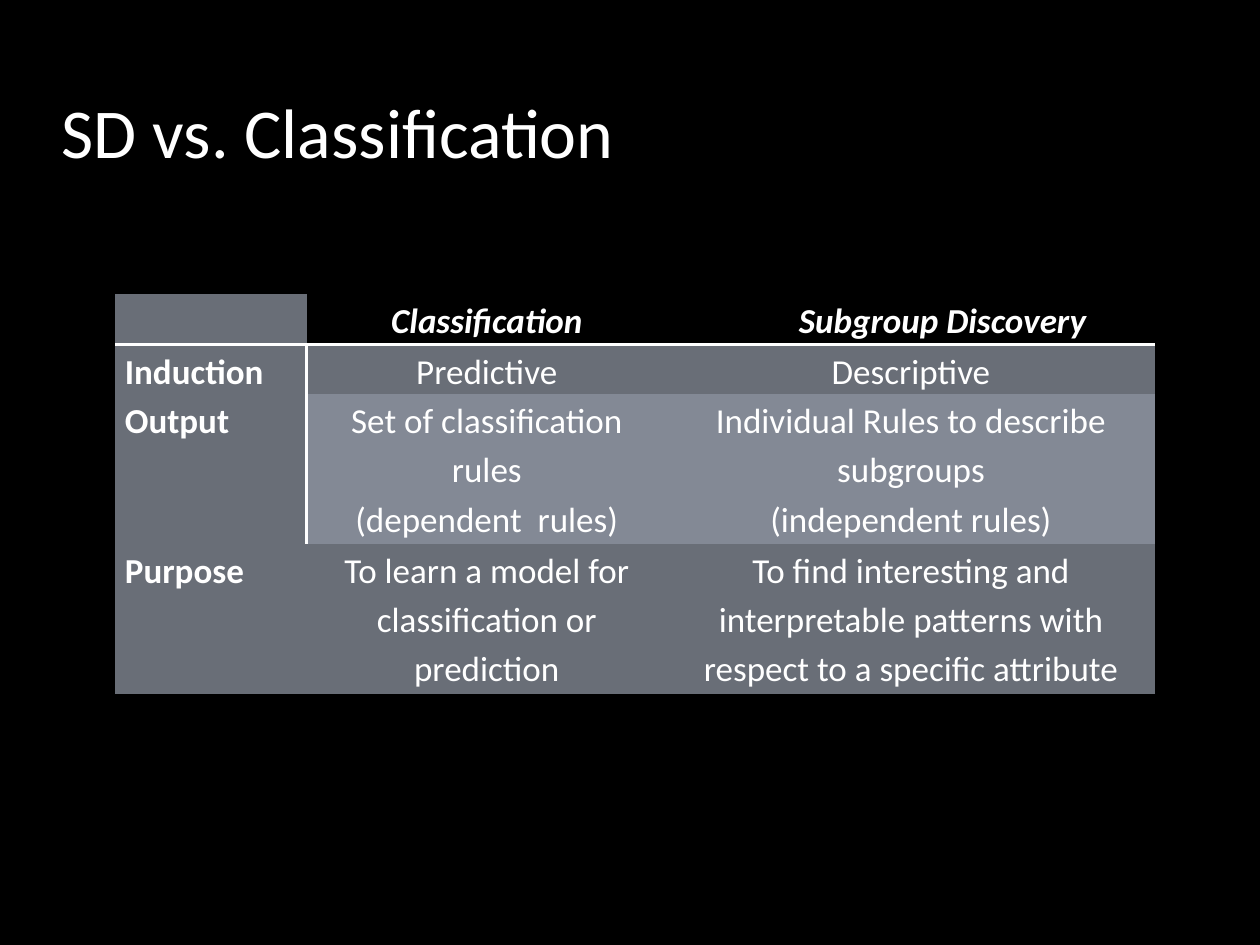
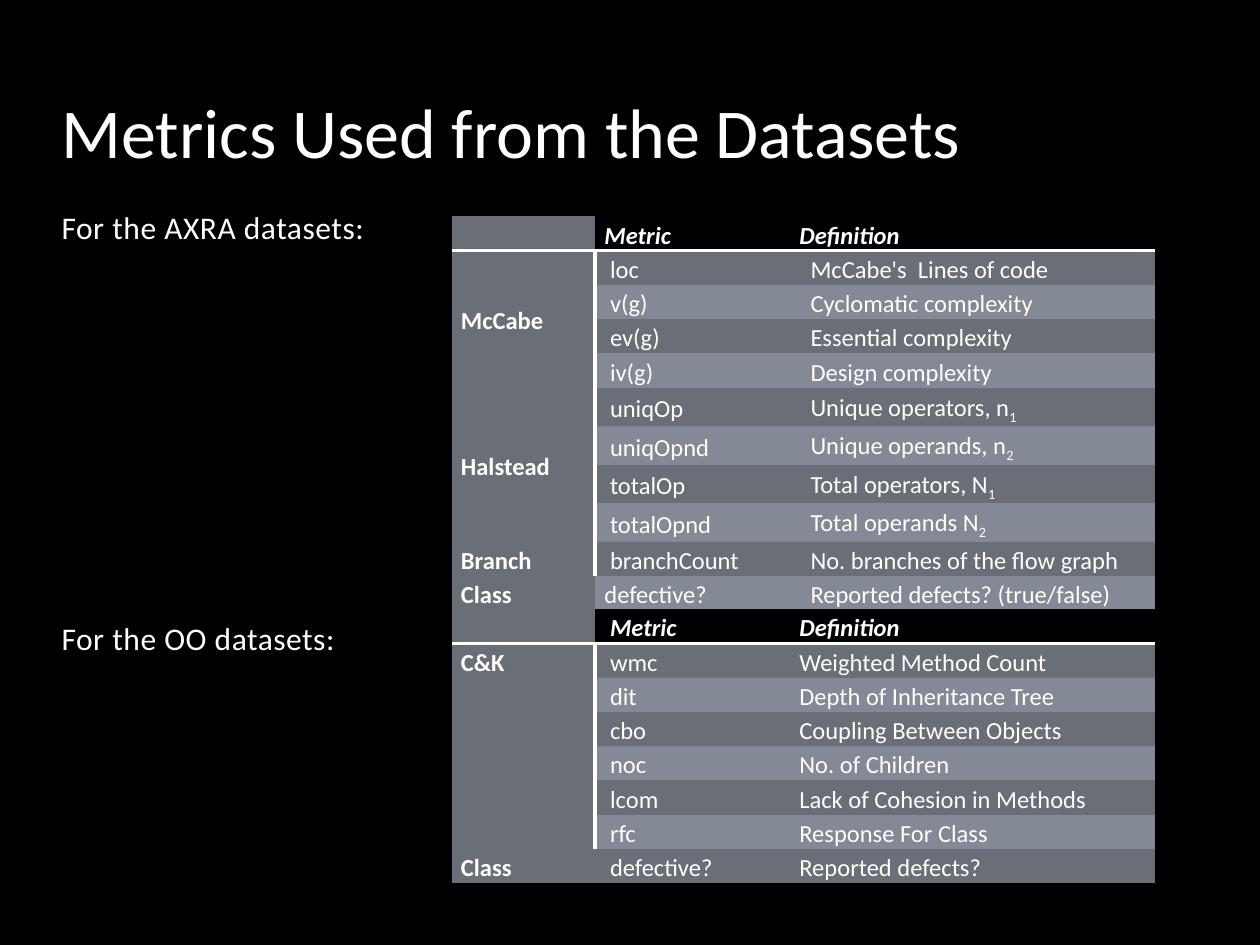
from lxml.etree import SubElement
from pptx import Presentation
from pptx.dml.color import RGBColor
from pptx.enum.text import MSO_ANCHOR as Anchor, PP_ALIGN as Align
from pptx.oxml.ns import qn
from pptx.util import Pt

BLACK = RGBColor(0x00, 0x00, 0x00)
WHITE = RGBColor(0xFF, 0xFF, 0xFF)
DARK_BAND = RGBColor(0x69, 0x6E, 0x77)
LIGHT_BAND = RGBColor(0x83, 0x89, 0x95)
FONT = "Calibri"
NO_STYLE = "{2D5ABB26-0587-4C30-8999-92F81FD0307C}"
LEFT, TEXT_WIDTH = 28.1, 604.8
CELL_INSET = 5.4
SPACE = 3.2  # width of one space at the small table size
METRIC_ROW = 19.6
METRIC_LEFT = 258

COMPARISON = [
    ("", "Classification", "Subgroup Discovery"),
    ("Induction", "Predictive", "Descriptive"),
    ("Output", "Set of classification rules\n(dependent  rules)",
     "Individual Rules to describe subgroups\n(independent rules)"),
    ("Purpose", "To learn a model for classification or prediction",
     "To find interesting and interpretable patterns with respect to a specific attribute"),
]

# An underscore starts a subscript.
AGENCY_METRICS = [
    ("", "Metric", "Definition"),
    ("McCabe", "loc", "McCabe's  Lines of code"),
    ("", "v(g)", "Cyclomatic complexity"),
    ("", "ev(g)", "Essential complexity"),
    ("", "iv(g)", "Design complexity"),
    ("Halstead", "uniqOp", "Unique operators, n_1"),
    ("", "uniqOpnd", "Unique operands, n_2"),
    ("", "totalOp", "Total operators, N_1"),
    ("", "totalOpnd", "Total operands N_2"),
    ("Branch", "branchCount", "No. branches of the flow graph"),
    ("Class", "defective?", "Reported defects? (true/false)"),
]

OO_METRICS = [
    ("", "Metric", "Definition"),
    ("C&K", "wmc", "Weighted Method Count"),
    ("", "dit", "Depth of Inheritance Tree"),
    ("", "cbo", "Coupling Between Objects"),
    ("", "noc", "No. of Children"),
    ("", "lcom", "Lack of Cohesion in Methods"),
    ("", "rfc", "Response For Class"),
    ("Class", "defective?", "Reported defects?"),
]


def style_font(font, size, bold=False, italic=False):
    font.name, font.size = FONT, Pt(size)
    font.bold, font.italic = bold, italic
    font.color.rgb = WHITE


def add_page(deck, title):
    page = deck.slides.add_slide(deck.slide_layouts[5])
    box = page.shapes.title
    box.left, box.top = Pt(LEFT), Pt(18)
    box.width, box.height = Pt(TEXT_WIDTH), Pt(84.2)
    frame = box.text_frame
    frame.text = title
    frame.vertical_anchor = Anchor.BOTTOM
    para = frame.paragraphs[0]
    para.alignment = Align.LEFT
    style_font(para.runs[0].font, 40)
    return page


def add_label(page, text, top):
    box = page.shapes.add_textbox(Pt(LEFT), Pt(top), Pt(220), Pt(29.2))
    frame = box.text_frame
    frame.word_wrap = True
    frame.text = text
    span = frame.paragraphs[0].runs[0]
    style_font(span.font, 18)
    span.font._element.set("spc", "30")


def add_border(cell, side):
    """Draw one white edge; side is R or B."""
    line = SubElement(cell._tc.get_or_add_tcPr(), qn(f"a:ln{side}"), w=str(Pt(2)))
    fill = SubElement(line, qn("a:solidFill"))
    SubElement(fill, qn("a:srgbClr"), val=str(WHITE))


def write_cell(cell, text, size, bold, italic, align):
    cell.text_frame.text = text
    for para in cell.text_frame.paragraphs:
        base, _, subscript = para.text.partition("_")
        para.line_spacing = 1.15
        para.alignment = align
        if not base:
            SubElement(para._p, qn("a:endParaRPr"), sz=str(size * 100))
            continue
        para.text = base
        if subscript:
            span = para.add_run()
            span.text = subscript
            span.font._element.set("baseline", "-25000")
        for span in para.runs:
            style_font(span.font, size, bold, italic)


def cell_fill(row, column):
    if column == 0:
        return DARK_BAND
    if row == 0:
        return BLACK
    return DARK_BAND if row % 2 else LIGHT_BAND


def add_grid(page, left, top, widths, heights, rows, size, anchor=Anchor.TOP,
             align=Align.LEFT, header_indents=(0, 0, 0), body_indents=(0, 0, 0)):
    """Add a banded table with a ruled header row and label column."""
    table_frame = page.shapes.add_table(len(rows), len(widths), Pt(left), Pt(top),
                                        Pt(sum(widths)), Pt(sum(heights)))
    table = table_frame.table
    table.first_row = table.horz_banding = False
    table._tbl.tblPr.find(qn("a:tableStyleId")).text = NO_STYLE
    for column, width in zip(table.columns, widths):
        column.width = Pt(width)
    for row, height in zip(table.rows, heights):
        row.height = Pt(height)

    for r, texts in enumerate(rows):
        indents = body_indents if r else header_indents
        for c, text in enumerate(texts):
            cell = table.cell(r, c)
            if r == 0:
                add_border(cell, "B")
            elif c == 0 and r < len(rows) - 1:
                add_border(cell, "R")
            cell.fill.solid()
            cell.fill.fore_color.rgb = cell_fill(r, c)
            cell.margin_left = Pt(CELL_INSET + indents[c])
            cell.margin_right = Pt(CELL_INSET)
            cell.margin_top = cell.margin_bottom = 0
            cell.vertical_anchor = anchor
            write_cell(cell, text, size, bold=r == 0 or c == 0, italic=r == 0,
                       align=align if c else Align.LEFT)
    return table


def add_comparison_page(deck):
    page = add_page(deck, "SD vs. Classification")
    add_grid(page, 66, 168, (109.2, 206, 278.8), (28.8, 28, 85.7, 85.7), COMPARISON,
             size=20, align=Align.CENTER, header_indents=(0, 0, 36))


def add_metrics_page(deck):
    page = add_page(deck, "Metrics Used from the Datasets")
    add_label(page, "For the AXRA datasets:", 115.6)
    add_label(page, "For the OO datasets:", 350.4)

    agency = add_grid(page, METRIC_LEFT, 123.6, (82, 111.4, 208.6),
                      [METRIC_ROW] * len(AGENCY_METRICS), AGENCY_METRICS, size=14,
                      anchor=Anchor.MIDDLE, body_indents=(0, SPACE, 2 * SPACE))
    for first in (1, 5):
        agency.cell(first, 0).merge(agency.cell(first + 3, 0))
    agency.cell(len(AGENCY_METRICS) - 1, 1).margin_left = Pt(CELL_INSET)

    indents = (0, SPACE, SPACE)
    add_grid(page, METRIC_LEFT, 348, (82, 108.2, 211.8),
             [METRIC_ROW] * len(OO_METRICS), OO_METRICS, size=14,
             header_indents=indents, body_indents=indents)


def main():
    deck = Presentation()
    deck.slide_width, deck.slide_height = Pt(720), Pt(540)
    background = deck.slide_master.background.fill
    background.solid()
    background.fore_color.rgb = BLACK
    add_comparison_page(deck)
    add_metrics_page(deck)
    deck.save("out.pptx")


if __name__ == "__main__":
    main()
